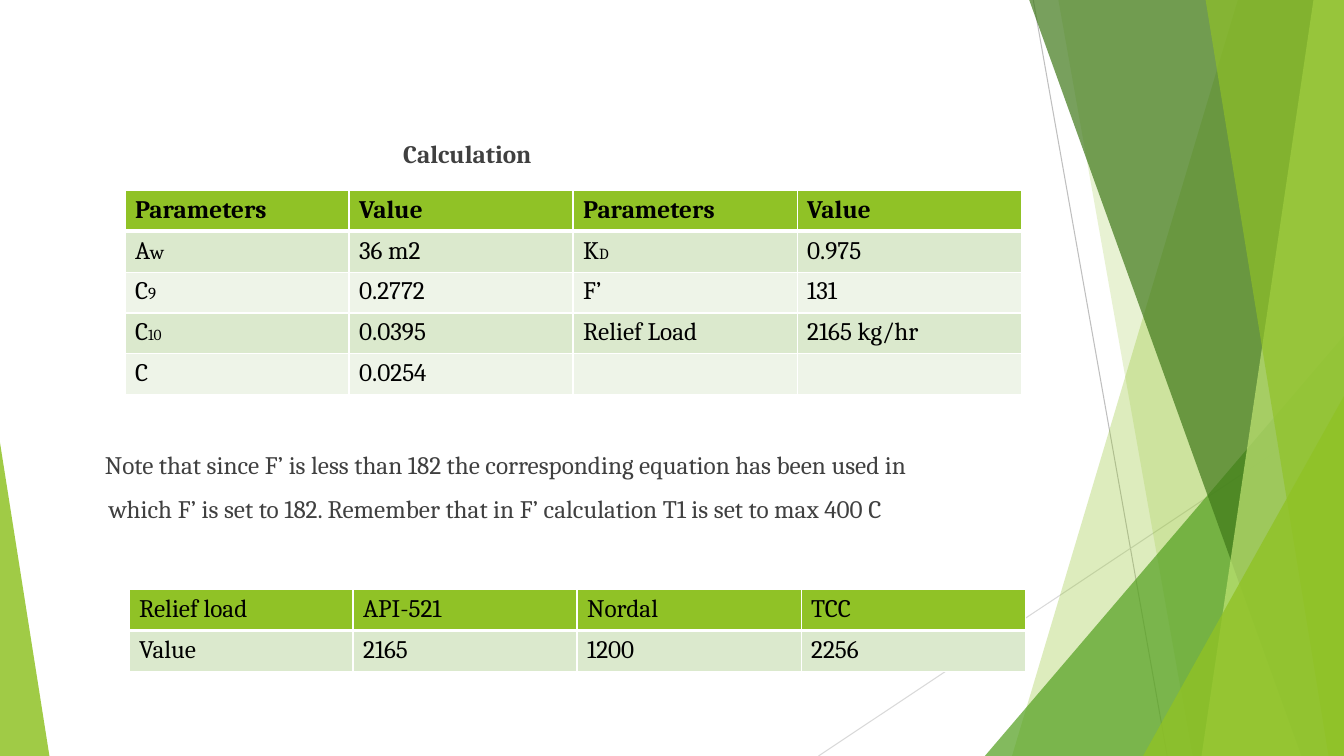
import pptx
import pptx.util
import pptx.dml.color
import pptx.enum.shapes
import pptx.enum.text
import pptx.oxml
import pptx.oxml.ns
import lxml.etree

HUES = {
    "lime": "90C226", "green": "54A021", "dark": "3F7819", "pale": "C0E474",
    "band": "DBE9CD", "light": "EEF4E8", "white": "FFFFFF", "black": "000000",
    "text": "404040", "grey": "BFBFBF", "mist": "D9D9D9",
}
FONT = "Cambria"
SUBS = {"w": 14, "D": 11, "9": 12, "10": 11}
LINES = [((76.88, 0), (86.85, 100), "grey"), ((100, 53.73), (60.9, 100), "mist")]
SHARDS = [
    ("free", 92.1, 75.3, "lime", 30),
    ("free", 78.75, 88.73, "lime", 20),
    ("right", 73.28, 44.4, "green", 72),
    ("free", 76.58, 96.83, "dark", 70),
    ("free", 97.73, 89.4, "pale", 70),
    ("free", 89.7, 98.85, "lime", 65),
    ("right", 85.05, 52.4, "lime", 80),
    ("left", 3.68, 58.53, "lime", 85),
]
LOADS = [
    ["Parameters", "Value", "Parameters", "Value"],
    ["A|w", "36 m2", "K|D", "0.975"],
    ["C|9", "0.2772", "F’", "131"],
    ["C|10", "0.0395", "Relief Load", "2165 kg/hr"],
    ["C", "0.0254", "", ""],
]
RESULTS = [["Relief load", "API-521", "Nordal", "TCC"], ["Value", "2165", "1200", "2256"]]
NOTES = [
    "Note that since F’ is less than 182 the corresponding equation has been used in",
    "which F’ is set to 182. Remember that in F’ calculation T1 is set to max 400 C",
]


def tint(name):
    return pptx.dml.color.RGBColor.from_string(HUES[name])


def part(box, x, y, w, h):
    left, top, wide, high = box
    return (left + int(wide * x / 100), top + int(high * y / 100),
            int(wide * w / 100), int(high * h / 100))


def style(run, size=18, bold=False, hue="text"):
    font = run.font
    font.name, font.size, font.bold = FONT, pptx.util.Pt(size), bold
    font.color.rgb = tint(hue)


def paint(shape, hue, share):
    shape.shadow.inherit = False
    shape.line.fill.background()
    shape.fill.solid()
    shape.fill.fore_color.rgb = tint(hue)
    color = shape.fill._xPr.find(".//" + pptx.oxml.ns.qn("a:srgbClr"))
    lxml.etree.SubElement(color, pptx.oxml.ns.qn("a:alpha"), val=str(share * 1000))


def draw_shards(slide, box):
    for start, end, hue in LINES:
        x, y = part(box, *start, 0, 0)[:2]
        right, low = part(box, *end, 0, 0)[:2]
        line = slide.shapes.add_connector(
            pptx.enum.shapes.MSO_CONNECTOR.STRAIGHT, x, y, right, low)
        line.line.color.rgb = tint(hue)
        line.line.width = pptx.util.Pt(0.75)
        lxml.etree.SubElement(line._element.spPr, pptx.oxml.ns.qn("a:effectLst"))
    for kind, first, second, hue, share in SHARDS:
        if kind == "free":
            spots = [part(box, x, y, 0, 0)[:2]
                     for x, y in [(first, 0), (100, 0), (100, 100), (second, 100)]]
            build = slide.shapes.build_freeform(*spots[0])
            build.add_line_segments(spots[1:], close=True)
            shape = build.convert_to_shape()
        else:
            x, wide = (first, 100 - first) if kind == "right" else (0, first)
            shape = slide.shapes.add_shape(
                pptx.enum.shapes.MSO_SHAPE.ISOSCELES_TRIANGLE,
                *part(box, x, second, wide, 100 - second))
            shape.adjustments[0] = 1 if kind == "right" else 0
        paint(shape, hue, share)


def add_words(slide, box, lines, bold=False, shift=0):
    frame = slide.shapes.add_textbox(*box).text_frame
    frame.word_wrap = True
    frame.vertical_anchor = pptx.enum.text.MSO_ANCHOR.MIDDLE
    frame.margin_left = frame.margin_right = frame.margin_top = frame.margin_bottom = 0
    frame.text = "\n".join(lines)
    for i, para in enumerate(frame.paragraphs):
        para.space_before = pptx.util.Pt(10 if i else 0)
        para._p.get_or_add_pPr().set("marL", str(int(pptx.util.Inches(shift * i))))
        style(para.runs[0], bold=bold)


def edge(cell, row):
    props = cell._tc.get_or_add_tcPr()
    for side in "LRTB":
        thick = (row, side) in [(0, "B"), (1, "T")]
        props.append(pptx.oxml.parse_xml(
            f'<a:ln{side} {pptx.oxml.ns.nsdecls("a")} w="{38100 if thick else 12700}">'
            f'<a:solidFill><a:srgbClr val="{HUES["white"]}"/></a:solidFill></a:ln{side}>'))


def add_grid(slide, box, rows, bold):
    table = slide.shapes.add_table(len(rows), len(rows[0]), *box).table
    for r, row in enumerate(rows):
        for c, words in enumerate(row):
            cell = table.cell(r, c)
            edge(cell, r)
            cell.fill.solid()
            cell.fill.fore_color.rgb = tint(
                "lime" if r == 0 else "band" if r % 2 else "light")
            para = cell.text_frame.paragraphs[0]
            main, _, sub = words.partition("|")
            para.text = main
            if sub:
                para.add_run().text = sub
            for i, run in enumerate(para.runs):
                style(run, SUBS[sub] if i else 18, bold and r == 0, "black")


def main():
    deck = pptx.Presentation()
    deck.slide_width = pptx.util.Inches(13.33)
    deck.slide_height = pptx.util.Inches(7.5)
    slide = deck.slides.add_slide(deck.slide_layouts[6])
    page = (0, 0, deck.slide_width, deck.slide_height)
    draw_shards(slide, page)
    add_words(slide, part(page, 30, 17.5, 15, 5.6), ["Calculation"], bold=True)
    add_words(slide, part(page, 7.8, 57.3, 66, 14), NOTES, shift=0.04)
    add_grid(slide, part(page, 9.3, 25.2, 66.68, 27), LOADS, True)
    add_grid(slide, part(page, 9.6, 78, 66.68, 10.8), RESULTS, False)
    deck.save("out.pptx")


if __name__ == "__main__":
    main()
